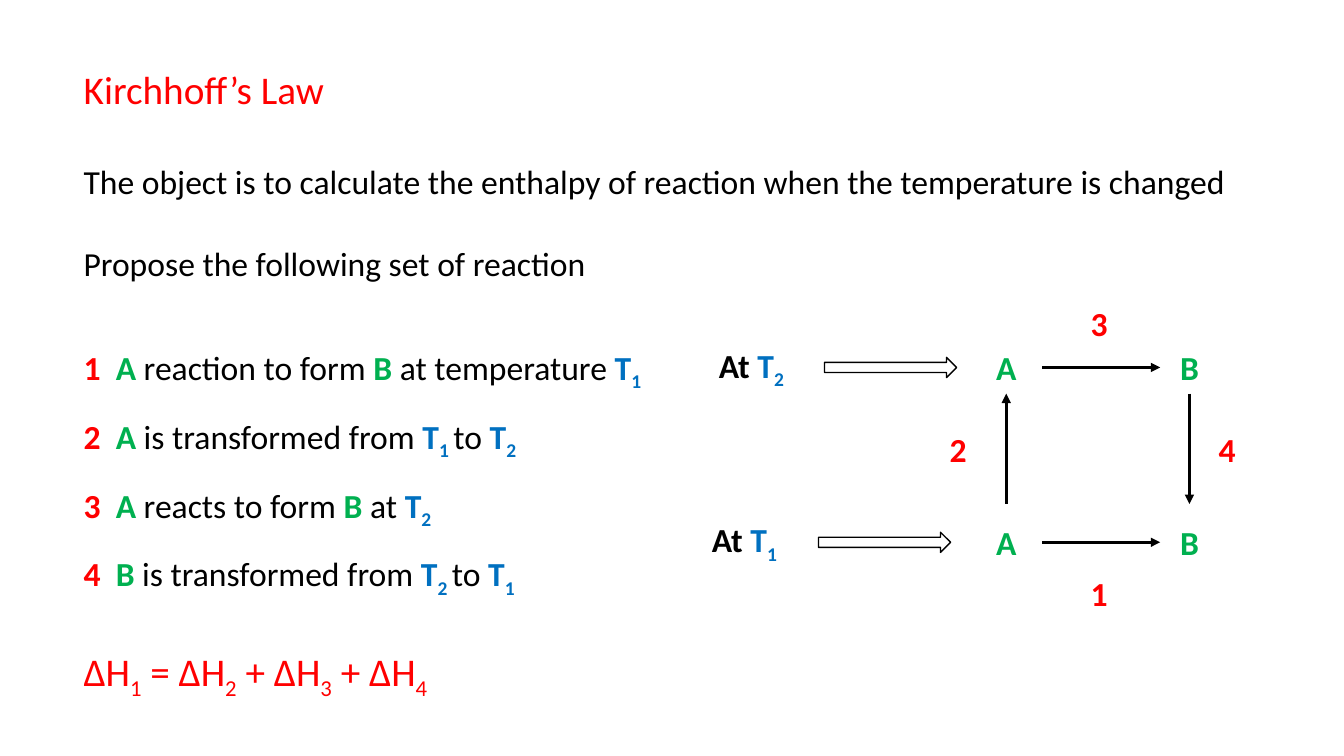
"""Build the slide that explains Kirchhoff's law with a reaction cycle."""
from dataclasses import dataclass

from lxml.etree import SubElement
from pptx import Presentation
from pptx.dml.color import RGBColor
from pptx.enum.shapes import MSO_CONNECTOR, MSO_SHAPE
from pptx.enum.text import MSO_ANCHOR, MSO_AUTO_SIZE, PP_ALIGN
from pptx.oxml.ns import qn
from pptx.util import Inches, Pt

WIDE, HIGH = Inches(13.33), Inches(7.5)
FONT = "Calibri"
RED, GREEN, BLUE = "FF0000", "00B050", "0070C0"
BLACK, WHITE = "000000", "FFFFFF"
LEFT, SPAN = 5.48, 87.5
COL_A, COL_B, MID = 74.87, 88.5, 81.79
TOP, LOW = 48.6, 71.73
BOX_H = 6.67


@dataclass
class Run:
    text: str
    color: str = BLACK
    bold: bool = False
    sub: bool = False


@dataclass
class Para:
    runs: list[Run]
    size: int = 24
    before: float = 0
    line: float = 1


@dataclass
class Label:
    runs: list[Run]
    x: float
    y: float
    wide: float = 7.5
    high: float = BOX_H


@dataclass
class Link:
    start: str
    out: int
    end: str
    into: int


def tint(code: str) -> RGBColor:
    return RGBColor.from_string(code)


def across(share: float) -> int:
    return round(WIDE * share / 100)


def down(share: float) -> int:
    return round(HIGH * share / 100)


def bold(text: str, color: str) -> Run:
    return Run(text, color, True)


def temp(sign: str) -> list[Run]:
    return [bold("T", BLUE), Run(sign, BLUE, True, True)]


def step(mark: str, kind: str, *rest: Run) -> Para:
    return Para([bold(mark + "\t", RED), bold(kind + " ", GREEN), *rest], line=1.5)


def write(item, para: Para) -> None:
    item.font.name = FONT
    item.font.size = Pt(para.size)
    item.space_before = Pt(para.before)
    item.line_spacing = para.line
    same_bold = len({r.bold for r in para.runs}) == 1
    same_color = len({r.color for r in para.runs}) == 1
    if same_bold:
        item.font.bold = para.runs[0].bold
    if same_color:
        item.font.color.rgb = tint(para.runs[0].color)
    if "\t" in para.runs[0].text:
        props = item._p.get_or_add_pPr()
        tabs = props.makeelement(qn("a:tabLst"), {})
        SubElement(tabs, qn("a:tab"), pos=str(Inches(0.32)), algn="l")
        spot = props.find(qn("a:defRPr"))
        if spot is None:
            props.append(tabs)
        else:
            spot.addprevious(tabs)
    for part in para.runs:
        run = item.add_run()
        run.text = part.text
        if not same_bold:
            run.font.bold = part.bold
        if not same_color:
            run.font.color.rgb = tint(part.color)
        if part.sub:
            run._r.get_or_add_rPr().set("baseline", "-25000")


def fill(shape, paras: list[Para], align: PP_ALIGN, anchor: MSO_ANCHOR) -> None:
    frame = shape.text_frame
    frame.word_wrap = True
    frame.auto_size = MSO_AUTO_SIZE.NONE
    frame.vertical_anchor = anchor
    for i, para in enumerate(paras):
        item = frame.add_paragraph() if i else frame.paragraphs[0]
        item.alignment = align
        write(item, para)


def add_label(slide, label: Label):
    box = slide.shapes.add_textbox(
        across(label.x - label.wide / 2), down(label.y - label.high / 2),
        across(label.wide), down(label.high))
    fill(box, [Para(label.runs)], PP_ALIGN.CENTER, MSO_ANCHOR.MIDDLE)
    return box


def add_link(slide, link: Link, nodes: dict) -> None:
    line = slide.shapes.add_connector(MSO_CONNECTOR.STRAIGHT, 0, 0, 0, 0)
    line.begin_connect(nodes[link.start], link.out)
    line.end_connect(nodes[link.end], link.into)
    line.line.color.rgb = tint(BLACK)
    line.line.width = Pt(2.25)
    SubElement(line.line._get_or_add_ln(), qn("a:tailEnd"), type="triangle")
    SubElement(line._element.spPr, qn("a:effectLst"))


def add_arrow(slide, x: float, y: float) -> None:
    arrow = slide.shapes.add_shape(
        MSO_SHAPE.RIGHT_ARROW, across(x), down(y - 1.33), across(9.83), down(2.67))
    arrow.shadow.inherit = False
    arrow.fill.solid()
    arrow.fill.fore_color.rgb = tint(WHITE)
    arrow.line.color.rgb = tint(BLACK)
    arrow.line.width = Pt(1)


STEPS = [
    step("1", "A", Run("reaction to form "), bold("B ", GREEN),
         Run("at temperature "), *temp("1")),
    step("2", "A", Run("is transformed from "), *temp("1 "), Run("to "), *temp("2")),
    step("3", "A", Run("reacts to form "), bold("B ", GREEN), Run("at "), *temp("2")),
    step("4", "B", Run("is transformed from "), *temp("2 "), Run("to "), *temp("1")),
]
STEPS[0].before = 29.3
SUM = [Run(text, RED, sub=text.isdigit())
       for text in ("∆H", "1", " = ∆H", "2", " + ∆H", "3", " + ∆H", "4")]
BODY = [
    Para([Run("The object is to calculate the enthalpy of reaction "
              "when the temperature is changed")]),
    Para([Run("Propose the following set of reaction")], before=29.3),
    *STEPS,
    Para(SUM, 28, 34.2),
]
NODES = {
    name + row: Label([bold(name, GREEN)], x, y, wide, high)
    for name, x, wide in (("A", COL_A, 5.33), ("B", COL_B, 4.35))
    for row, y, high in (("top", TOP, 6.93), ("low", LOW, 10.13))
}
LINKS = [Link("Alow", 3, "Blow", 1), Link("Alow", 0, "Atop", 2),
         Link("Atop", 3, "Btop", 1), Link("Btop", 2, "Blow", 0)]
MARKS = [("1", MID, 78.4), ("2", 71.29, 59.33), ("3", MID, 42.67), ("4", 91.31, 59.33)]
STATES = [("2", 55.91, 61.35, TOP), ("1", 55.39, 60.9, LOW)]


def main() -> None:
    deck = Presentation()
    deck.slide_width, deck.slide_height = WIDE, HIGH
    slide = deck.slides.add_slide(deck.slide_layouts[5])
    title = slide.shapes.title
    title.left, title.top = across(LEFT), down(8)
    title.width, title.height = across(SPAN), down(8)
    fill(title, [Para([Run("Kirchhoff’s Law", RED)], 28)], PP_ALIGN.LEFT, MSO_ANCHOR.TOP)
    body = slide.shapes.add_textbox(across(LEFT), down(20.67), across(SPAN), down(65.6))
    fill(body, BODY, PP_ALIGN.LEFT, MSO_ANCHOR.TOP)
    nodes = {key: add_label(slide, node) for key, node in NODES.items()}
    for link in LINKS:
        add_link(slide, link, nodes)
    for mark, x, y in MARKS:
        add_label(slide, Label([bold(mark, RED)], x, y, 2.8))
    for sign, x, tail, y in STATES:
        add_label(slide, Label([bold("At ", BLACK), *temp(sign)], x, y))
        add_arrow(slide, tail, y)
    deck.save("out.pptx")


if __name__ == "__main__":
    main()
